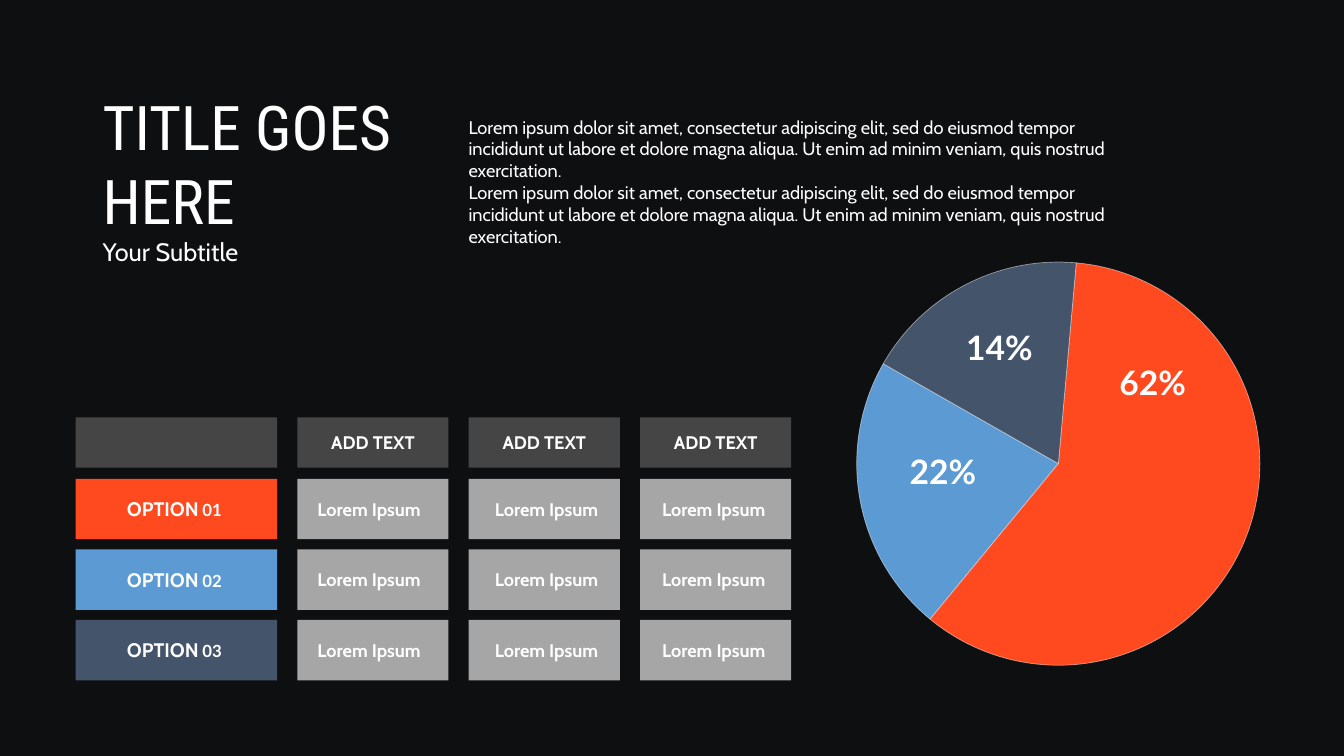
from lxml import etree
from pptx import Presentation
from pptx.dml.color import RGBColor
from pptx.enum.shapes import MSO_SHAPE as Shape
from pptx.enum.text import MSO_ANCHOR as Anchor, PP_ALIGN as Align
from pptx.oxml.ns import qn
from pptx.util import Pt

NIGHT = RGBColor(0x0E, 0x0F, 0x11)
WHITE = RGBColor(0xFF, 0xFF, 0xFF)
ORANGE = RGBColor(0xFE, 0x4A, 0x1E)
BLUE = RGBColor(0x5C, 0x9A, 0xD3)
SLATE = RGBColor(0x44, 0x54, 0x6B)
CHARCOAL = RGBColor(0x45, 0x45, 0x45)
GREY = RGBColor(0xA6, 0xA6, 0xA6)

LOREM = ("Lorem ipsum dolor sit amet, consectetur adipiscing elit, sed do "
         "eiusmod tempor incididunt ut labore et dolore magna aliqua. "
         "Ut enim ad minim veniam, quis nostrud exercitation.")


def write(para, text, size=13, font="Cabin", bold=False, align=Align.LEFT):
    para.alignment = align
    span = para.add_run()
    span.text = text
    span.font.size = Pt(size)
    span.font.name = font
    span.font.bold = bold
    span.font.color.rgb = WHITE


def add_block(kind, left, top, width, height, color):
    """Add a filled shape without outline or shadow."""
    block = page.shapes.add_shape(kind, Pt(left), Pt(top), Pt(width), Pt(height))
    block.shadow.inherit = False
    block.fill.solid()
    block.fill.fore_color.rgb = color
    block.line.fill.background()
    block.text_frame.vertical_anchor = Anchor.MIDDLE
    return block


deck = Presentation()
deck.slide_width, deck.slide_height = Pt(960), Pt(540)
page = deck.slides.add_slide(deck.slide_layouts[6])
page.background.fill.solid()
page.background.fill.fore_color.rgb = NIGHT

# Heading and introduction
box = page.shapes.add_textbox(Pt(66.24), Pt(59.76), Pt(246.96), Pt(135.36))
box.text_frame.word_wrap = True
write(box.text_frame.paragraphs[0], "TITLE GOES HERE", size=44, font="Roboto Condensed")
write(box.text_frame.add_paragraph(), "Your Subtitle", size=18)

box = page.shapes.add_textbox(Pt(327.6), Pt(79.2), Pt(502.56), Pt(101.52))
box.text_frame.word_wrap = True
write(box.text_frame.paragraphs[0], LOREM)
write(box.text_frame.add_paragraph(), LOREM)

# Grid of options
LABEL_LEFT, LABEL_WIDTH = 54, 144
CELL_WIDTH, GAP = 108, 14.4
HEAD_TOP, HEAD_HEIGHT = 298.08, 36
ROW_TOP, ROW_HEIGHT, ROW_PITCH = 342, 43.2, 50.4
CELL_INSETS = [14.4, 18.7, 15.8]
columns = [LABEL_LEFT + LABEL_WIDTH + GAP + i * (CELL_WIDTH + GAP) for i in range(3)]

add_block(Shape.RECTANGLE, LABEL_LEFT, HEAD_TOP, LABEL_WIDTH, HEAD_HEIGHT, CHARCOAL)
for left in columns:
    head = add_block(Shape.RECTANGLE, left, HEAD_TOP, CELL_WIDTH, HEAD_HEIGHT, CHARCOAL)
    write(head.text_frame.paragraphs[0], "ADD TEXT", bold=True, align=Align.CENTER)

for row, color in enumerate([ORANGE, BLUE, SLATE]):
    top = ROW_TOP + row * ROW_PITCH
    label = add_block(Shape.RECTANGLE, LABEL_LEFT, top, LABEL_WIDTH, ROW_HEIGHT, color)
    label.text_frame.margin_left = Pt(36.7)
    para = label.text_frame.paragraphs[0]
    write(para, "OPTION", size=14, bold=True)
    write(para, " ", size=11, bold=True)
    write(para, f"0{row + 1}", size=12, font="Lato", bold=True)
    for left, inset in zip(columns, CELL_INSETS):
        cell = add_block(Shape.RECTANGLE, left, top, CELL_WIDTH, ROW_HEIGHT, GREY)
        cell.text_frame.margin_left = Pt(inset)
        cell.text_frame.margin_right = 0
        write(cell.text_frame.paragraphs[0], "Lorem Ipsum", bold=True)

# Pie slices: start and end in degrees clockwise from three o'clock
ADJUSTMENT_PER_DEGREE = 0.6
slices = [
    ("22%", BLUE, 129.5, 209.7, 632.88, 318.24),
    ("62%", ORANGE, 275.1, 129.5, 782.64, 254.88),
    ("14%", SLATE, 209.7, 275.1, 673.2, 229.68),
]
for share, color, start, end, left, top in slices:
    wedge = add_block(Shape.PIE, 612, 187.2, 288, 288, color)
    wedge.adjustments[0] = start * ADJUSTMENT_PER_DEGREE
    wedge.adjustments[1] = end * ADJUSTMENT_PER_DEGREE
    wedge.line.color.rgb = WHITE
    wedge.line.width = Pt(0.5)
    line_color = wedge.line.fill._xPr.find(qn("a:solidFill"))[0]
    etree.SubElement(line_color, qn("a:alpha"), val="50000")

    box = page.shapes.add_textbox(Pt(left), Pt(top), Pt(81.36), Pt(36))
    box.text_frame.word_wrap = True
    write(box.text_frame.paragraphs[0], share, size=24, font="Lato", bold=True,
          align=Align.CENTER)

deck.save("out.pptx")
